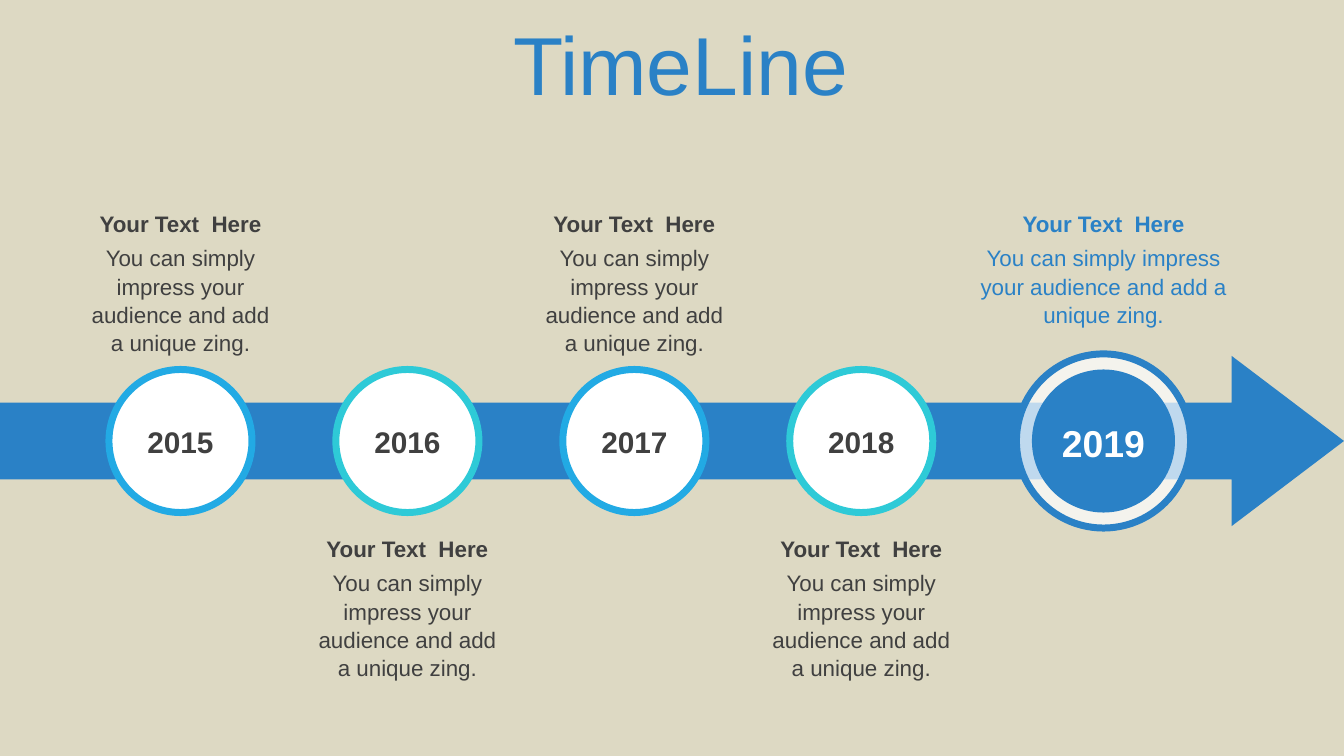
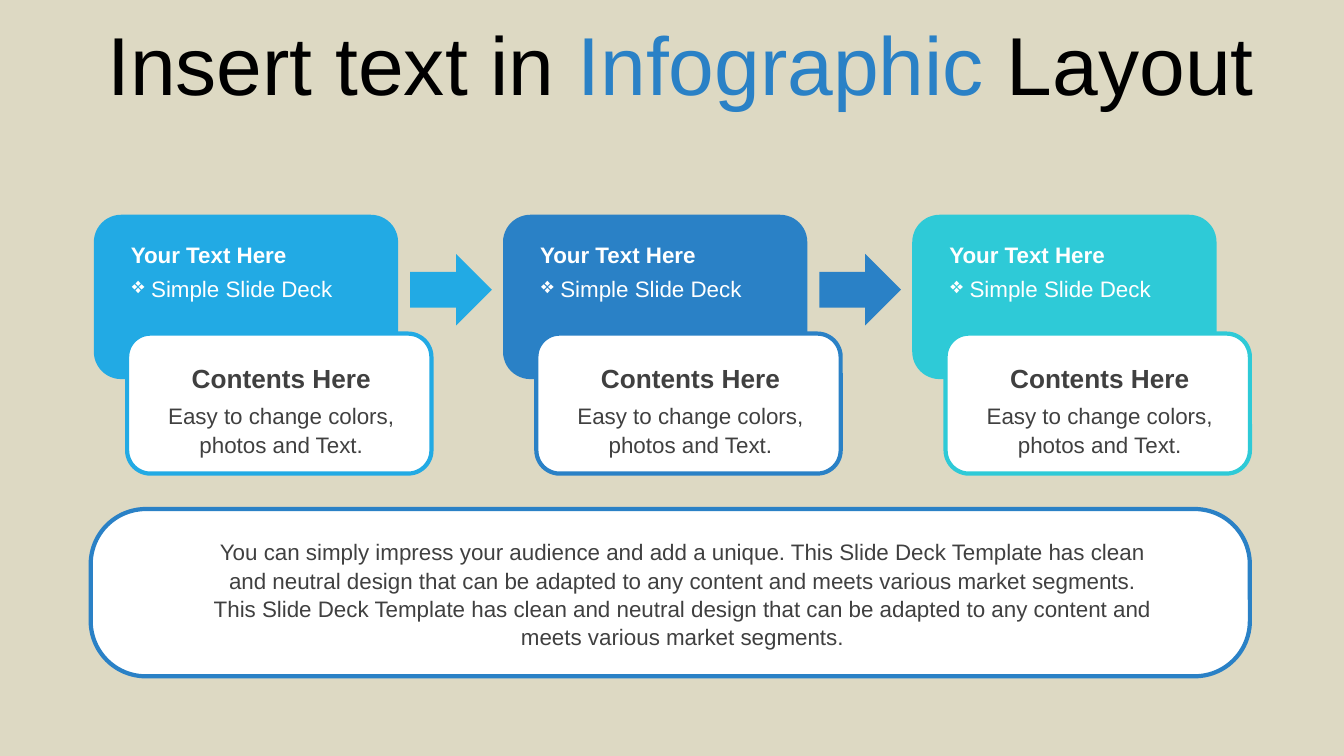
from lxml.etree import SubElement
from pptx import Presentation
from pptx.dml.color import RGBColor
from pptx.enum.shapes import MSO_SHAPE
from pptx.enum.text import MSO_ANCHOR, MSO_AUTO_SIZE, PP_ALIGN
from pptx.oxml.ns import qn
from pptx.util import Pt

SAND, WHITE, BLACK, GRAY = "DDD9C3", "FFFFFF", "000000", "404040"
BLUE, SKY, TEAL = "2A81C6", "22AAE4", "2ECAD7"


def rgb(color):
    return RGBColor.from_string(color)


class Deck:
    font = "Arial"
    title_size = 58.7
    text_size = 16
    line_spacing = 1.05

    def __init__(self):
        self.prs = Presentation()
        self.prs.slide_width, self.prs.slide_height = Pt(960), Pt(540)
        background = self.prs.slide_master.background.fill
        background.solid()
        background.fore_color.rgb = rgb(SAND)
        self.slide = None

    def style_run(self, run, size, color, bold=False):
        run.font.name = self.font
        run.font.size = Pt(size)
        run.font.bold = bold
        run.font.color.rgb = rgb(color)

    def fill_frame(self, frame, text, size, color, bold, align):
        frame.word_wrap = True
        frame.text = text
        paragraph = frame.paragraphs[0]
        paragraph.alignment = align
        paragraph.line_spacing = self.line_spacing
        self.style_run(paragraph.runs[0], size, color, bold)
        return paragraph

    def new_slide(self, *title_parts):
        """Start a slide whose title is made of (text, color) parts."""
        self.slide = self.prs.slides.add_slide(self.prs.slide_layouts[5])
        title = self.slide.shapes.title
        title.left, title.top = Pt(11.5), Pt(0)
        title.width, title.height = Pt(949), Pt(90)
        frame = title.text_frame
        frame.word_wrap = True
        frame.auto_size = MSO_AUTO_SIZE.NONE
        frame.vertical_anchor = MSO_ANCHOR.MIDDLE
        paragraph = frame.paragraphs[0]
        paragraph.alignment = PP_ALIGN.CENTER
        for text, color in title_parts:
            run = paragraph.add_run()
            run.text = text
            self.style_run(run, self.title_size, color)

    def text(self, text, left, top, width, height, color=GRAY, size=text_size,
             bold=False, align=PP_ALIGN.CENTER):
        box = self.slide.shapes.add_textbox(
            Pt(left), Pt(top), Pt(width), Pt(height))
        return self.fill_frame(box.text_frame, text, size, color, bold, align)

    def bullet(self, text, left, top, width, height, color):
        paragraph = self.text(text, left, top, width, height, color,
                              align=PP_ALIGN.LEFT)
        properties = paragraph._p.get_or_add_pPr()
        properties.set("marL", str(Pt(13.7)))
        properties.set("indent", str(-Pt(13.7)))
        SubElement(properties, qn("a:buChar"), char="❖")

    def shape(self, kind, left, top, width, height, fill, line=None,
              line_width=3, adjustments=(), opacity=None):
        """Draw a preset shape; opacity is a percentage of the fill."""
        shape = self.slide.shapes.add_shape(
            kind, Pt(left), Pt(top), Pt(width), Pt(height))
        shape.shadow.inherit = False
        for index, value in enumerate(adjustments):
            shape.adjustments[index] = value
        shape.fill.solid()
        shape.fill.fore_color.rgb = rgb(fill)
        if opacity is not None:
            fill_color = shape.element.spPr.find(
                qn("a:solidFill")).find(qn("a:srgbClr"))
            SubElement(fill_color, qn("a:alpha"), val=str(opacity * 1000))
        if line:
            shape.line.color.rgb = rgb(line)
            shape.line.width = Pt(line_width)
        else:
            shape.line.fill.background()
        return shape

    def circle(self, center_x, center_y, diameter, fill, line=None, opacity=None):
        return self.shape(MSO_SHAPE.OVAL, center_x - diameter / 2,
                          center_y - diameter / 2, diameter, diameter, fill,
                          line, line_width=5, opacity=opacity)

    def year(self, circle, text, size, color):
        frame = circle.text_frame
        frame.margin_left = frame.margin_right = Pt(0)
        frame.vertical_anchor = MSO_ANCHOR.MIDDLE
        self.fill_frame(frame, text, size, color, True, PP_ALIGN.CENTER)

    def note(self, center_x, top, width, color=GRAY):
        left = center_x - width / 2
        self.text("Your Text  Here", left, top, width, 26.6, color, bold=True)
        self.text("You can simply impress your audience and add a unique zing.",
                  left, top + 24.8, width, 85, color)

    def card(self, left, color):
        self.shape(MSO_SHAPE.ROUNDED_RECTANGLE, left, 153.4, 217.4, 117.4, color)
        self.shape(MSO_SHAPE.ROUNDED_RECTANGLE, left + 23.8, 238.3, 217.4, 100,
                   WHITE, color)
        self.text("Your Text Here", left + 19.4, 167.8, 183.6, 26.6, WHITE,
                  bold=True, align=PP_ALIGN.LEFT)
        self.bullet("Simple Slide Deck", left + 20.2, 192.2, 183.6, 26.6, WHITE)
        self.text("Contents Here", left + 45.4, 254.2, 177, 27.4, size=18.7,
                  bold=True)
        self.text("Easy to change colors, photos and Text.",
                  left + 45.4, 283, 177, 41)


def build_timeline(deck):
    deck.new_slide(("TimeLine", BLUE))
    axis_y, arrow_height = 315, 121.7
    first_x, step = 128.9, 162.1
    above, below = 145.4, 377.5
    deck.shape(MSO_SHAPE.RIGHT_ARROW, 0, axis_y - arrow_height / 2, 960,
               arrow_height, BLUE, adjustments=(0.45, 0.66))
    for index, year in enumerate(("2015", "2016", "2017", "2018")):
        center_x = first_x + index * step
        is_below = index % 2
        milestone = deck.circle(center_x, axis_y, 102.2, WHITE,
                                TEAL if is_below else SKY)
        deck.year(milestone, year, 21.3, GRAY)
        deck.note(center_x, below if is_below else above, 152.6)

    final_x = 788.2
    deck.circle(final_x, axis_y, 124.4, WHITE, BLUE, opacity=70)
    final_milestone = deck.circle(final_x, axis_y, 102.2, BLUE)
    deck.year(final_milestone, "2019", 26.7, WHITE)
    deck.note(final_x, above, 195.1, BLUE)


def build_infographic(deck):
    deck.new_slide(("Insert text in ", BLACK), ("Infographic ", BLUE),
                   ("Layout", BLACK))
    first_left, step = 67, 292.3
    colors = (SKY, BLUE, TEAL)
    for index, color in enumerate(colors):
        left = first_left + index * step
        deck.card(left, color)
        if index < len(colors) - 1:
            deck.shape(MSO_SHAPE.RIGHT_ARROW, left + 226, 181.4, 58.3, 51.1, color)

    deck.shape(MSO_SHAPE.ROUNDED_RECTANGLE, 64.8, 363.6, 828, 119.5, WHITE, BLUE,
               adjustments=(0.33,))
    deck.text("You can simply impress your audience and add a unique. "
              "This Slide Deck Template has clean and neutral design that can be "
              "adapted to any content and meets various market segments. "
              "This Slide Deck Template has clean and neutral design that can be "
              "adapted to any content and meets various market segments.",
              139.7, 380.2, 695.5, 85)


def main():
    deck = Deck()
    build_timeline(deck)
    build_infographic(deck)
    deck.prs.save("out.pptx")


if __name__ == "__main__":
    main()
